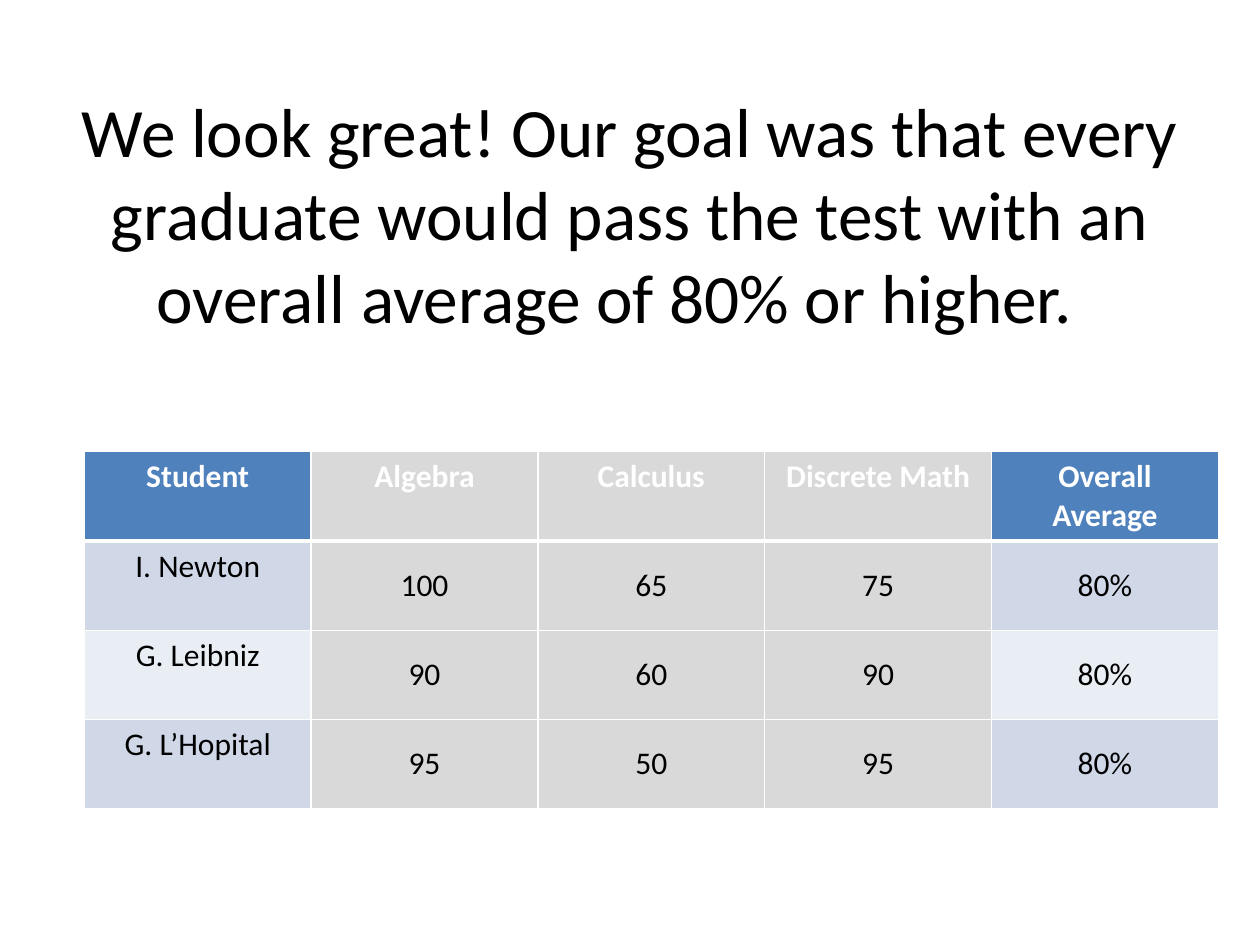
"""Build a slide that shows student scores and their overall averages."""
import dataclasses

import lxml.etree
import pptx
import pptx.dml.color
import pptx.enum.text
import pptx.oxml.ns
import pptx.util

Cm = pptx.util.Cm
Pt = pptx.util.Pt
Anchor = pptx.enum.text.MSO_ANCHOR


@dataclasses.dataclass(frozen=True)
class Theme:
    font: str = "Calibri"
    ink: str = "000000"
    white: str = "FFFFFF"
    header: str = "4F81BD"
    score: str = "D9D9D9"
    bands: tuple = ("D0D8E8", "E9EDF4")
    title_size: float = 39.6
    table_size: float = 18
    thin_rule: float = 1
    thick_rule: float = 3


THEME = Theme()
TITLE = ("We look great! Our goal was that every graduate would pass "
         "the test with an overall average of 80% or higher.  ")
SCORES = (
    ("Student", "Algebra", "Calculus", "Discrete Math", "Overall Average"),
    ("I. Newton", "100", "65", "75", "80%"),
    ("G. Leibniz", "90", "60", "90", "80%"),
    ("G. L’Hopital", "95", "50", "95", "80%"),
)


def rgb(color):
    return pptx.dml.color.RGBColor.from_string(color)


def write_text(frame, text, *, size, color=THEME.ink, bold=False):
    para = frame.paragraphs[0]
    para.alignment = pptx.enum.text.PP_ALIGN.CENTER
    span = para.add_run()
    span.text = text
    span.font.name = THEME.font
    span.font.size = Pt(size)
    span.font.bold = bold
    span.font.color.rgb = rgb(color)


def add_title(page, text):
    box = page.shapes.title
    box.left, box.top, box.width, box.height = Cm(1.27), Cm(0.76), Cm(22.86), Cm(7.06)
    frame = box.text_frame
    frame.word_wrap = True
    frame.auto_size = pptx.enum.text.MSO_AUTO_SIZE.NONE
    frame.vertical_anchor = Anchor.MIDDLE
    write_text(frame, text, size=THEME.title_size)


def set_borders(cell, **widths):
    properties = cell._tc.get_or_add_tcPr()
    for place, side in enumerate("LRTB"):
        width = Pt(widths.get(side, THEME.thin_rule))
        line = lxml.etree.Element(pptx.oxml.ns.qn(f"a:ln{side}"), w=str(int(width)))
        fill = lxml.etree.SubElement(line, pptx.oxml.ns.qn("a:solidFill"))
        lxml.etree.SubElement(fill, pptx.oxml.ns.qn("a:srgbClr"), val=THEME.white)
        properties.insert(place, line)


def format_cell(cell, text, row, column):
    is_header = row == 0
    is_score = 0 < column < len(SCORES[0]) - 1
    outer_fill = THEME.header if is_header else THEME.bands[(row - 1) % 2]
    cell.fill.solid()
    cell.fill.fore_color.rgb = rgb(THEME.score if is_score else outer_fill)
    cell.vertical_anchor = Anchor.TOP if is_header or column == 0 else Anchor.MIDDLE
    write_text(cell.text_frame, text, size=THEME.table_size, bold=is_header,
               color=THEME.white if is_header else THEME.ink)
    thick_side = {0: "B", 1: "T"}.get(row)
    set_borders(cell, **({thick_side: THEME.thick_rule} if thick_side else {}))


def add_score_table(page, rows):
    frame = page.shapes.add_table(len(rows), len(rows[0]), Cm(1.7), Cm(9.1),
                                  Cm(22.86), Cm(7.2))
    for row, values in enumerate(rows):
        for column, text in enumerate(values):
            format_cell(frame.table.cell(row, column), text, row, column)


def main():
    deck = pptx.Presentation()
    deck.slide_width, deck.slide_height = Cm(25.4), Cm(19.05)
    page = deck.slides.add_slide(deck.slide_layouts[5])
    add_title(page, TITLE)
    add_score_table(page, SCORES)
    deck.save("out.pptx")


if __name__ == "__main__":
    main()
